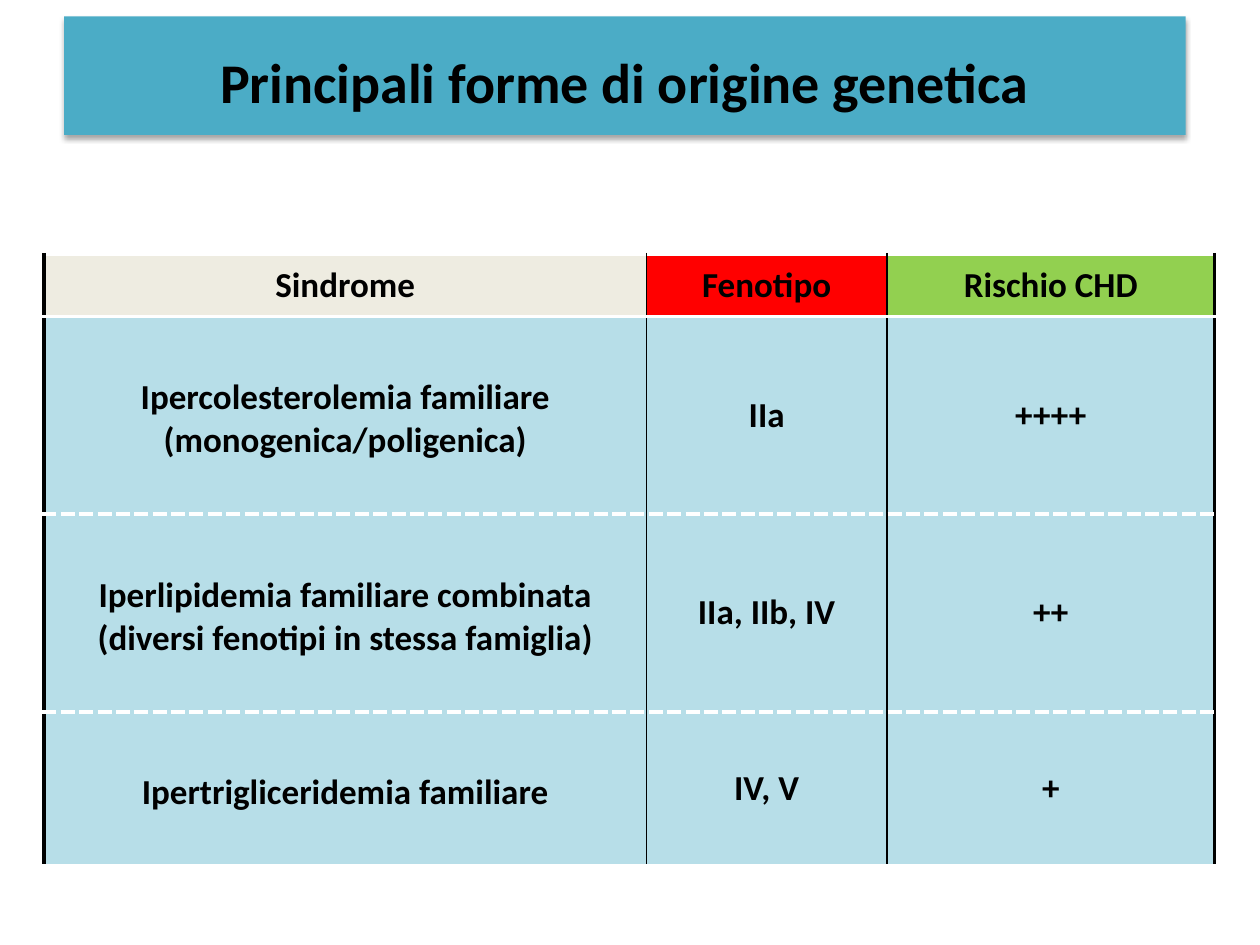
from lxml import etree
from pptx import Presentation
from pptx.dml.color import RGBColor
from pptx.enum.text import MSO_ANCHOR, MSO_AUTO_SIZE, PP_ALIGN
from pptx.oxml.ns import qn
from pptx.util import Inches, Pt

MIDDLE = MSO_ANCHOR.MIDDLE
CENTER = PP_ALIGN.CENTER
NO_AUTOFIT = MSO_AUTO_SIZE.NONE
TITLE_ONLY = 5
FONT = "Calibri"
BLACK, WHITE = "000000", "FFFFFF"
TITLE_FILL, BODY_FILL = "4BACC6", "B7DEE8"
HEADER_FILLS = ["EEECE1", "FF0000", "92D050"]
COLUMN_WIDTHS = [4.78, 1.91, 2.6]
ROW_HEIGHTS = [0.49, 1.57, 1.57, 1.22]
ROWS = [
    ["Sindrome", "Fenotipo", "Rischio CHD"],
    ["Ipercolesterolemia familiare (monogenica/poligenica)", "IIa", "++++"],
    ["Iperlipidemia familiare combinata (diversi fenotipi in stessa famiglia)", "IIa, IIb, IV", "++"],
    ["Ipertrigliceridemia familiare", "IV, V", "+"],
]


def color(value):
    """Turn a hex string into a colour."""
    return RGBColor.from_string(value)


def write_text(text_frame, text, size):
    """Write one centred bold black paragraph."""
    paragraph = text_frame.paragraphs[0]
    paragraph.alignment = CENTER
    run = paragraph.add_run()
    run.text = text
    run.font.name = FONT
    run.font.size = Pt(size)
    run.font.bold = True
    run.font.color.rgb = color(BLACK)


def add_solid_fill(parent, value):
    """Append a solid fill element and return its colour element."""
    fill = etree.SubElement(parent, qn("a:solidFill"))
    return etree.SubElement(fill, qn("a:srgbClr"), val=value)


def add_border(cell, side, value, width, dash="solid"):
    """Append one border line to a table cell."""
    properties = cell._tc.get_or_add_tcPr()
    line = etree.SubElement(properties, qn(f"a:ln{side}"), w=str(Pt(width)))
    add_solid_fill(line, value)
    etree.SubElement(line, qn("a:prstDash"), val=dash)


def add_shadow(shape):
    """Give a shape a soft shadow that falls straight down."""
    effects = etree.SubElement(shape._element.spPr, qn("a:effectLst"))
    shadow = etree.SubElement(
        effects, qn("a:outerShdw"), blurRad=str(Pt(3.1)), dist=str(Pt(1.8)),
        dir="5400000", rotWithShape="0")
    shadow_color = etree.SubElement(shadow, qn("a:srgbClr"), val=BLACK)
    etree.SubElement(shadow_color, qn("a:alpha"), val="35000")


def place_title(slide, left, top, width, height):
    """Format the title placeholder as a filled banner."""
    title = slide.shapes.title
    title.left, title.top = Inches(left), Inches(top)
    title.width, title.height = Inches(width), Inches(height)
    title.fill.solid()
    title.fill.fore_color.rgb = color(TITLE_FILL)
    title.line.fill.background()
    add_shadow(title)
    text_frame = title.text_frame
    text_frame.word_wrap = True
    text_frame.auto_size = NO_AUTOFIT
    text_frame.vertical_anchor = MIDDLE
    text_frame.margin_top = Inches(0.14)
    write_text(text_frame, "Principali forme di origine genetica", 32)


def format_cell(cell, row, column):
    """Set the borders, fill and text of one syndrome table cell."""
    last_row, last_column = len(ROWS) - 1, len(COLUMN_WIDTHS) - 1
    add_border(cell, "L", BLACK, 2.25 if column == 0 else 1)
    add_border(cell, "R", BLACK, 2.25 if column == last_column else 1)
    add_border(cell, "T", WHITE, 2.25, "sysDash" if row > 1 else "solid")
    add_border(cell, "B", WHITE, 2.25, "sysDash" if 0 < row < last_row else "solid")
    cell.fill.solid()
    cell.fill.fore_color.rgb = color(BODY_FILL if row else HEADER_FILLS[column])
    cell.vertical_anchor = MIDDLE
    if row and column == 0:
        cell.margin_top = Inches(0.11)
    write_text(cell.text_frame, ROWS[row][column], 20)


def place_table(slide, left, top):
    """Build the syndrome table from its top left corner."""
    frame = slide.shapes.add_table(
        len(ROWS), len(COLUMN_WIDTHS), Inches(left), Inches(top),
        Inches(sum(COLUMN_WIDTHS)), Inches(sum(ROW_HEIGHTS)))
    table = frame.table
    table.first_row = False
    table.horz_banding = False
    for column, width in zip(table.columns, COLUMN_WIDTHS):
        column.width = Inches(width)
    for row, height in zip(table.rows, ROW_HEIGHTS):
        row.height = Inches(height)
    for row in range(len(ROWS)):
        for column in range(len(COLUMN_WIDTHS)):
            format_cell(table.cell(row, column), row, column)


def main():
    """Build and save the presentation."""
    presentation = Presentation()
    presentation.slide_width = Inches(10)
    presentation.slide_height = Inches(7.5)
    slide = presentation.slides.add_slide(presentation.slide_layouts[TITLE_ONLY])
    place_title(slide, 0.51, 0.13, 8.9, 0.94)
    place_table(slide, 0.35, 2.02)
    presentation.save("out.pptx")


if __name__ == "__main__":
    main()
